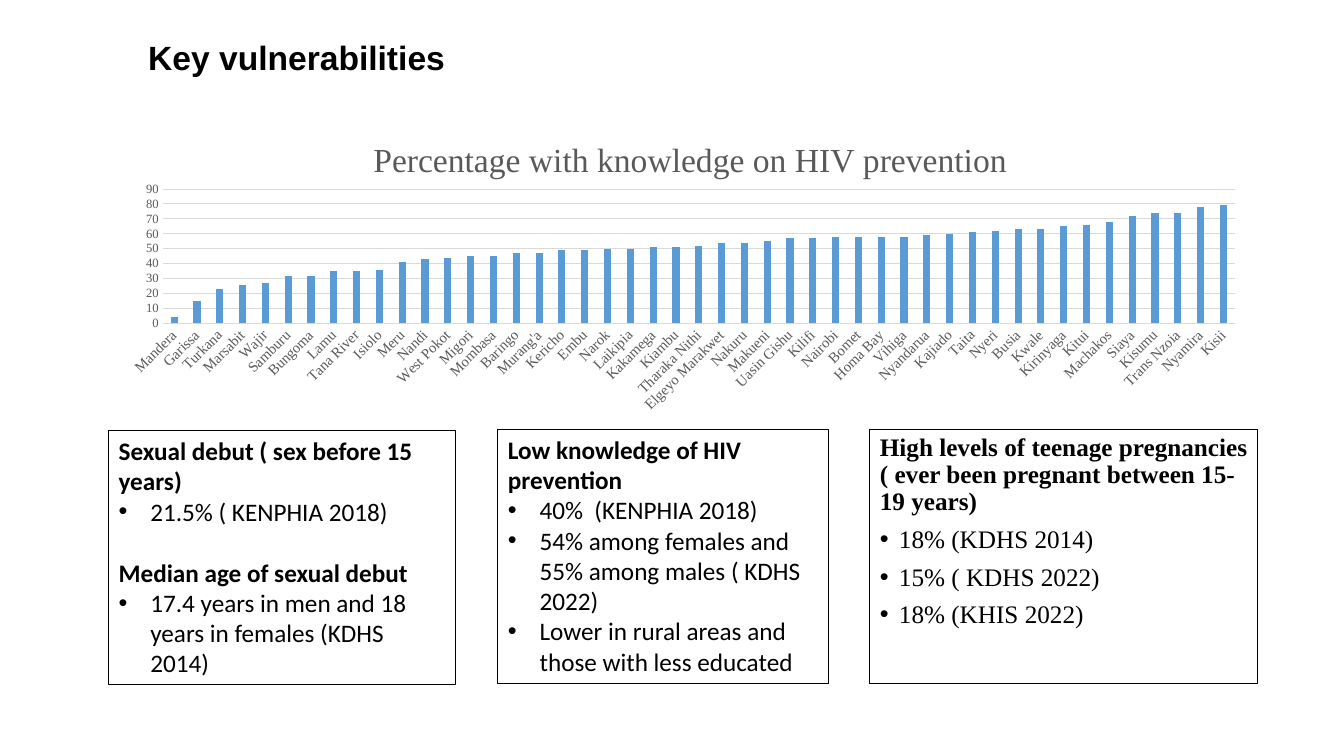
from lxml import etree
from pptx import Presentation
from pptx.chart.data import CategoryChartData
from pptx.dml.color import RGBColor
from pptx.enum.chart import XL_CHART_TYPE as ChartType, XL_TICK_MARK as TickMark
from pptx.enum.text import MSO_ANCHOR as Anchor, MSO_AUTO_SIZE as AutoSize, PP_ALIGN as Align
from pptx.oxml import parse_xml
from pptx.oxml.ns import nsdecls, qn
from pptx.util import Cm, Pt

BLACK, GREY, PALE, BLUE = "000000", "595959", "D9D9D9", "5B9BD5"
SERIF = "Times New Roman"

KNOWLEDGE = {
    "Mandera": 4, "Garissa": 15, "Turkana": 23, "Marsabit": 26, "Wajir": 27,
    "Samburu": 32, "Bungoma": 32, "Lamu": 35, "Tana River": 35, "Isiolo": 36,
    "Meru": 41, "Nandi": 43, "West Pokot": 44, "Migori": 45, "Mombasa": 45,
    "Baringo": 47, "Murang'a": 47, "Kericho": 49, "Embu": 49, "Narok": 50,
    "Laikipia": 50, "Kakamega": 51, "Kiambu": 51, "Tharaka Nithi": 52,
    "Elgeyo Marakwet": 54, "Nakuru": 54, "Makueni": 55, "Uasin Gishu": 57,
    "Kilifi": 57, "Nairobi": 58, "Bomet": 58, "Homa Bay": 58, "Vihiga": 58,
    "Nyandarua": 59, "Kajiado": 60, "Taita": 61, "Nyeri": 62, "Busia": 63,
    "Kwale": 63, "Kirinyaga": 65, "Kitui": 66, "Machakos": 68, "Siaya": 72,
    "Kisumu": 74, "Trans Nzoia": 74, "Nyamira": 78, "Kisii": 79,
}

# Each entry is (text, is a bullet)
DEBUT = [
    ("Sexual debut ( sex before 15 years)", False),
    ("21.5% ( KENPHIA 2018)", True),
    ("Median age of sexual debut", False),
    ("17.4 years in men and 18 years in females (KDHS 2014)", True),
]
PREVENTION = [
    ("Low knowledge of HIV prevention", False),
    ("40%  (KENPHIA 2018)", True),
    ("54% among females and 55% among males ( KDHS 2022)", True),
    ("Lower in rural areas and those with less educated", True),
]
PREGNANCIES = [
    ("High levels of teenage pregnancies ( ever been pregnant between 15-19 years)", False),
    ("18% (KDHS 2014)", True),
    ("15% ( KDHS 2022)", True),
    ("18% (KHIS 2022)", True),
]


def color(value):
    return RGBColor.from_string(value)


def style(font, size, name, shade, bold=False):
    font.size, font.name, font.bold = Pt(size), name, bold
    font.color.rgb = color(shade)


def place(shape, box):
    shape.left, shape.top, shape.width, shape.height = (Cm(length) for length in box)


def set_bullet(para, indent):
    """Hang a bullet at the given indent in cm, or clear it when indent is 0."""
    props = para._p.get_or_add_pPr()
    props.set("marL", str(Cm(indent)))
    props.set("indent", str(-Cm(indent)))
    if indent:
        etree.SubElement(props, qn("a:buFont")).set("typeface", "Arial")
        etree.SubElement(props, qn("a:buChar")).set("char", "•")
    else:
        etree.SubElement(props, qn("a:buNone"))


def set_layout(parent, following, inner=False, **fractions):
    """Fix the place of a chart part as fractions of the chart area."""
    for old in parent.findall(qn("c:layout")):
        parent.remove(old)
    layout = parse_xml(f"<c:layout {nsdecls('c')}><c:manualLayout/></c:layout>")
    manual = layout[0]
    if inner:
        etree.SubElement(manual, qn("c:layoutTarget")).set("val", "inner")
    for mode in ("xMode", "yMode"):
        etree.SubElement(manual, qn(f"c:{mode}")).set("val", "edge")
    for key, value in fractions.items():
        etree.SubElement(manual, qn(f"c:{key}")).set("val", str(value))
    following.addprevious(layout)


def add_title(page, box):
    title = page.shapes.title
    place(title, box)
    frame = title.text_frame
    frame.auto_size, frame.vertical_anchor = AutoSize.NONE, Anchor.MIDDLE
    para = frame.paragraphs[0]
    para.alignment, para.line_spacing = Align.LEFT, 0.9
    span = para.add_run()
    span.text = "Key vulnerabilities"
    style(span.font, 24, "Arial", BLACK, bold=True)


def add_knowledge_chart(page, box):
    data = CategoryChartData()
    data.categories = list(KNOWLEDGE)
    data.add_series("Series 1", list(KNOWLEDGE.values()))
    lengths = [Cm(length) for length in box]
    chart = page.shapes.add_chart(ChartType.COLUMN_CLUSTERED, *lengths, data).chart
    style(chart.font, 10, SERIF, BLACK)
    chart.has_legend = False

    # Heading
    chart.has_title = True
    heading = chart.chart_title
    span = heading.text_frame.paragraphs[0].add_run()
    span.text = "Percentage with knowledge on HIV prevention"
    style(span.font, 24, SERIF, GREY)
    set_layout(heading._element, heading._element.find(qn("c:overlay")), x=0.225, y=0.06)

    # Columns
    plot = chart.plots[0]
    plot.gap_width, plot.overlap, plot.vary_by_categories = 219, -27, False
    fill = plot.series[0].format.fill
    fill.solid()
    fill.fore_color.rgb = color(BLUE)
    area = plot._element.getparent()
    set_layout(area, plot._element, inner=True, x=0.047, y=0.246, w=0.933, h=0.44)

    # Axes
    counties, percent = chart.category_axis, chart.value_axis
    for axis, size in ((counties, 10.5), (percent, 9)):
        axis.major_tick_mark = axis.minor_tick_mark = TickMark.NONE
        style(axis.tick_labels.font, size, SERIF, GREY)
    percent.minimum_scale, percent.maximum_scale, percent.major_unit = 0, 90, 10
    percent.format.line.fill.background()
    for line in (counties.format.line, percent.major_gridlines.format.line):
        line.width = Pt(0.75)
        line.color.rgb = color(PALE)
    label_body = counties._element.find(qn("c:txPr")).find(qn("a:bodyPr"))
    label_body.set("rot", "-2700000")
    label_body.set("vert", "horz")


def fill_fact_box(shape, box, facts, font, indent, gap, heading_gap, spacing):
    place(shape, box)
    shape.line.color.rgb = color(BLACK)
    shape.line.width = Pt(0.75)
    frame = shape.text_frame
    frame.word_wrap, frame.auto_size = True, AutoSize.NONE
    frame.vertical_anchor = Anchor.TOP
    for index, (text, bulleted) in enumerate(facts):
        para = frame.add_paragraph() if index else frame.paragraphs[0]
        set_bullet(para, indent if bulleted else 0)
        para.line_spacing = spacing
        para.space_before = Pt((gap if bulleted else heading_gap) if index else 0)
        span = para.add_run()
        span.text = text
        style(span.font, 18, font, BLACK, bold=not bulleted)


def add_text_facts(page, box, facts):
    shape = page.shapes.add_textbox(0, 0, 0, 0)
    fill_fact_box(shape, box, facts, "Calibri", 0.8, gap=0, heading_gap=22, spacing=1.0)


def add_body_facts(page, box, facts):
    body = page.placeholders[1]
    fill_fact_box(body, box, facts, SERIF, 0.48, gap=7.5, heading_gap=7.5, spacing=0.9)


def build_vulnerabilities(deck):
    page = deck.slides.add_slide(deck.slide_layouts[1])
    add_title(page, (3.48, 0.36, 26.9, 2.26))
    add_knowledge_chart(page, (2.74, 2.87, 28.96, 7.7))
    add_text_facts(page, (2.74, 10.85, 8.74, 6.4), DEBUT)
    add_text_facts(page, (12.55, 10.82, 8.33, 6.4), PREVENTION)
    add_body_facts(page, (21.92, 10.82, 9.78, 6.4), PREGNANCIES)


def main():
    deck = Presentation()
    deck.slide_width, deck.slide_height = Cm(33.87), Cm(19.05)
    build_vulnerabilities(deck)
    deck.save("out.pptx")


if __name__ == "__main__":
    main()
